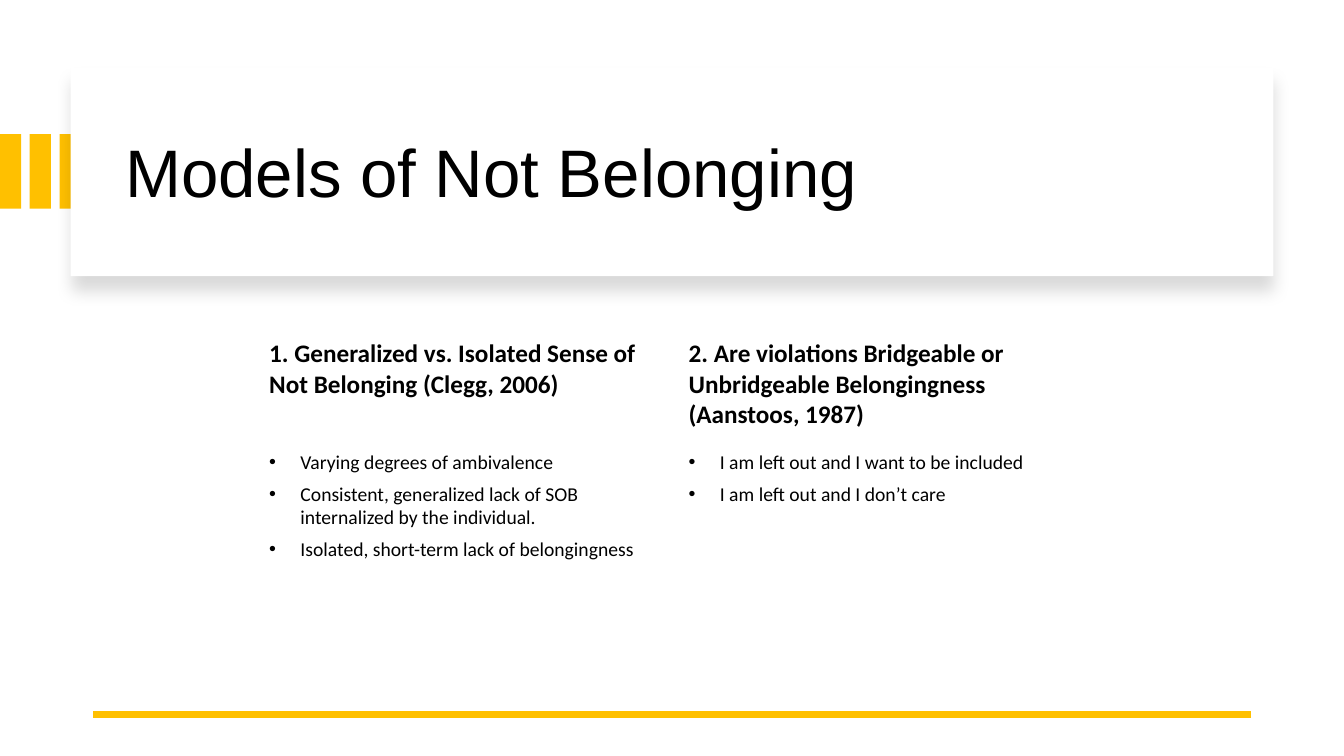
import pptx
import pptx.util
import pptx.dml.color
import pptx.enum.shapes
import pptx.enum.text
import pptx.oxml
import pptx.oxml.ns

Inches = pptx.util.Inches
Pt = pptx.util.Pt
WIDTH, HEIGHT = 13.33, 7.5
GOLD, WHITE, BLACK = "FFC000", "FFFFFF", "000000"
COMPARISON_LAYOUT = 4

MODELS = [
    ("1. Generalized vs. Isolated Sense of Not Belonging (Clegg, 2006)",
     ["Varying degrees of ambivalence",
      "Consistent, generalized lack of SOB internalized by the individual.",
      "Isolated, short-term lack of belongingness"]),
    ("2. Are violations Bridgeable or Unbridgeable Belongingness (Aanstoos, 1987)",
     ["I am left out and I want to be included",
      "I am left out and I don’t care"]),
]


def color(value):
    return pptx.dml.color.RGBColor.from_string(value)


def place(shape, left, top, width, height):
    shape.left, shape.top = Inches(left), Inches(top)
    shape.width, shape.height = Inches(width), Inches(height)


def add_block(page, left, top, width, height, fill):
    block = page.shapes.add_shape(
        pptx.enum.shapes.MSO_SHAPE.RECTANGLE,
        Inches(left), Inches(top), Inches(width), Inches(height))
    block.shadow.inherit = False
    block.fill.solid()
    block.fill.fore_color.rgb = color(fill)
    block.line.fill.background()
    return block


def write(box, lines, size, font="Calibri", bold=False, anchor="TOP",
          after=6, spacing=1.0, indent=0):
    """Fill a placeholder with one paragraph per line."""
    frame = box.text_frame
    frame.word_wrap = True
    frame.auto_size = pptx.enum.text.MSO_AUTO_SIZE.NONE
    frame.vertical_anchor = pptx.enum.text.MSO_ANCHOR[anchor]
    for index, line in enumerate(lines):
        para = frame.paragraphs[0] if index == 0 else frame.add_paragraph()
        para.alignment = pptx.enum.text.PP_ALIGN.LEFT
        para.space_before, para.space_after = Pt(0), Pt(after)
        para.line_spacing = spacing
        if indent:
            properties = para._p.get_or_add_pPr()
            properties.set("marL", str(Inches(indent)))
            properties.set("indent", str(-Inches(indent)))
        span = para.add_run()
        span.text = line
        span.font.name, span.font.size, span.font.bold = font, Pt(size), bold
        span.font.color.rgb = color(BLACK)


def add_soft_shadow(shape):
    effects = shape.element.spPr.find(pptx.oxml.ns.qn("a:effectLst"))
    effects.append(pptx.oxml.parse_xml(
        f'<a:outerShdw {pptx.oxml.ns.nsdecls("a")} blurRad="{Pt(11)}" '
        f'dist="{Pt(10)}" dir="5400000" algn="t" rotWithShape="0">'
        f'<a:srgbClr val="{BLACK}"><a:alpha val="15000"/></a:srgbClr>'
        '</a:outerShdw>'))


def build_header(page, left, top, width, height):
    """Gold stripes running under a raised panel that carries the title."""
    stripe_step = 0.295
    backdrop = [add_block(page, number * stripe_step, top + 0.66, 0.21, 0.74, GOLD)
                for number in range(3)]
    panel = add_block(page, left, top, width, height, WHITE)
    add_soft_shadow(panel)

    title = page.shapes.title
    place(title, left + 0.44, top + 0.22, width - 0.8, height - 0.37)
    write(title, ["Models of Not Belonging"], 48, font="Arial",
          anchor="MIDDLE", after=0, spacing=0.9)
    # The title stays in front of the panel
    for block in backdrop + [panel]:
        title.element.addprevious(block.element)


def build_model(heading_box, list_box, left, top, width, heading, points):
    """One column: a bold heading above its bullets."""
    place(heading_box, left, top, width, 0.77)
    write(heading_box, [heading], 18, bold=True)
    place(list_box, left, top + 1.11, width, 2.65)
    write(list_box, points, 14, indent=0.31)


def build_models(page, left, top, column_width, column_step):
    boxes = {box.placeholder_format.idx: box for box in page.placeholders}
    for column, (heading, points) in enumerate(MODELS):
        build_model(boxes[2 * column + 1], boxes[2 * column + 2],
                    left + column * column_step, top, column_width,
                    heading, points)


def build_footer_rule(page, left, right, top):
    rule = page.shapes.add_connector(
        pptx.enum.shapes.MSO_CONNECTOR.STRAIGHT,
        Inches(right), Inches(top), Inches(left), Inches(top))
    rule.line.color.rgb = color(GOLD)
    rule.line.width = Pt(4.5)
    rule.element.spPr.append(pptx.oxml.parse_xml(
        f'<a:effectLst {pptx.oxml.ns.nsdecls("a")}/>'))


def main():
    deck = pptx.Presentation()
    deck.slide_width, deck.slide_height = Inches(WIDTH), Inches(HEIGHT)
    page = deck.slides.add_slide(deck.slide_layouts[COMPARISON_LAYOUT])
    page.background.fill.solid()
    page.background.fill.fore_color.rgb = color(WHITE)

    margin = 0.7
    build_header(page, margin, 0.67, WIDTH - 2 * margin, 2.07)
    build_models(page, 2.57, 3.3, column_width=4.02, column_step=4.16)
    build_footer_rule(page, 0.92, WIDTH - 0.92, 7.09)
    deck.save("out.pptx")


if __name__ == "__main__":
    main()
